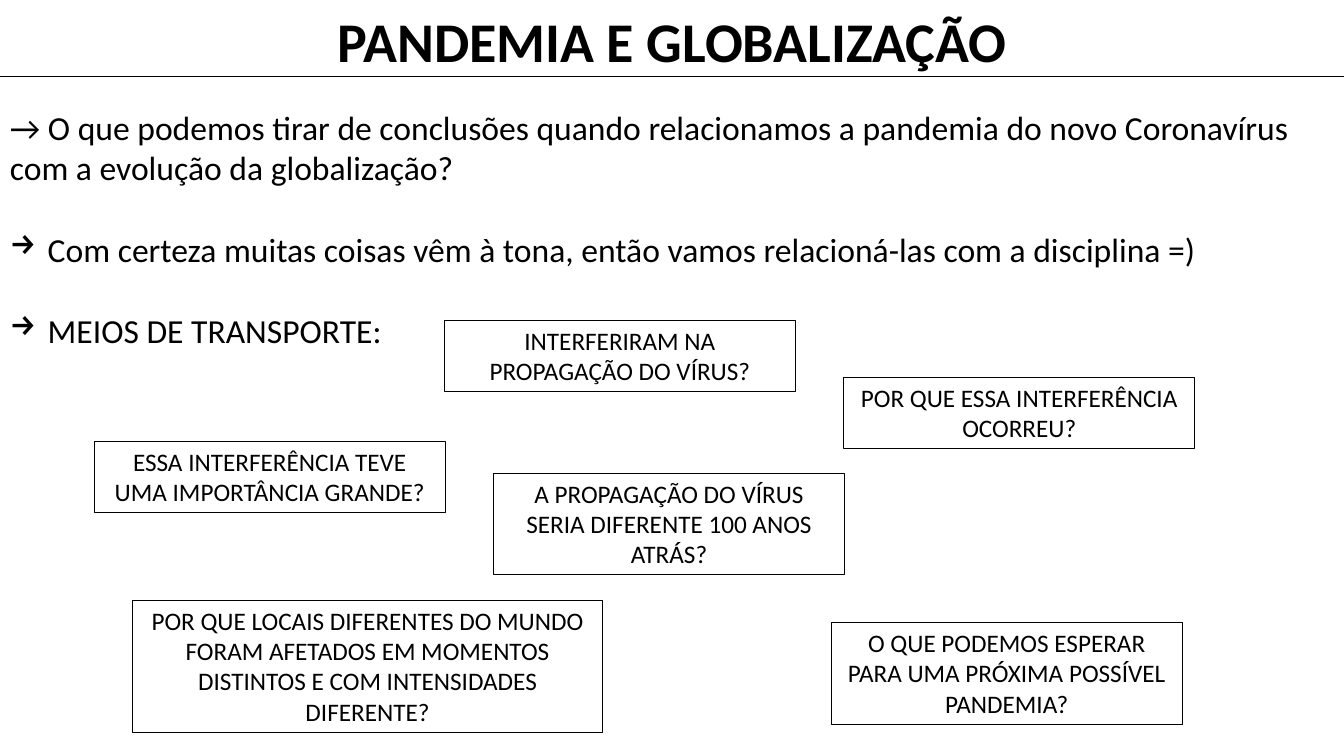
"""Build the slide on the pandemic and globalization."""
from lxml import etree
from pptx import Presentation
from pptx.dml.color import RGBColor
from pptx.enum.shapes import MSO_CONNECTOR, MSO_SHAPE
from pptx.enum.text import MSO_ANCHOR, PP_ALIGN
from pptx.oxml.ns import qn
from pptx.util import Pt

BLACK = RGBColor(0, 0, 0)
LEFT, CENTER = PP_ALIGN.LEFT, PP_ALIGN.CENTER
TOP = MSO_ANCHOR.TOP
RECTANGLE, STRAIGHT = MSO_SHAPE.RECTANGLE, MSO_CONNECTOR.STRAIGHT
WIDTH, HEIGHT = 960, 540
BODY_LINE = 29.3
QUESTION_LINE, QUESTION_PADDING = 21.8, 7.2


def write(frame, paragraphs, alignment, size, bold=False):
    frame.word_wrap = True
    frame.vertical_anchor = TOP
    for index, text in enumerate(paragraphs):
        paragraph = frame.paragraphs[0] if index == 0 else frame.add_paragraph()
        paragraph.alignment = alignment
        run = paragraph.add_run()
        run.text = text
        font_format = {"name": "Calibri", "size": Pt(size), "bold": bold}
        for attribute, value in font_format.items():
            setattr(run.font, attribute, value)
        run.font.color.rgb = BLACK


prs = Presentation()
prs.slide_width, prs.slide_height = Pt(WIDTH), Pt(HEIGHT)
slide = prs.slides.add_slide(prs.slide_layouts[6])

title = slide.shapes.add_textbox(Pt(0), Pt(1.4), Pt(WIDTH), Pt(55.7))
write(title.text_frame, ["PANDEMIA E GLOBALIZAÇÃO"], CENTER, 40, bold=True)

title_rule = slide.shapes.add_connector(STRAIGHT, Pt(0), Pt(54.7), Pt(WIDTH), Pt(54.7))
title_rule.line.color.rgb = BLACK
title_rule.line.width = Pt(0.5)
etree.SubElement(title_rule._element.spPr, qn("a:effectLst"))

body = slide.shapes.add_textbox(Pt(0), Pt(72.7), Pt(WIDTH), Pt(181.4))
write(body.text_frame, [
    "→ O que podemos tirar de conclusões quando relacionamos a pandemia "
    "do novo Coronavírus com a evolução da globalização?",
    "Com certeza muitas coisas vêm à tona, então vamos relacioná-las com a disciplina =)",
    "MEIOS DE TRANSPORTE:",
], LEFT, 24)
for topic in body.text_frame.paragraphs[1:]:
    topic.space_before = Pt(BODY_LINE)
    properties = topic._p.get_or_add_pPr()
    properties.set("marL", str(Pt(27)))
    properties.set("indent", str(Pt(-27)))
    etree.SubElement(properties, qn("a:buChar")).set("char", "→")

questions = [
    (317.5, 228.8, 250.6, 2, "INTERFERIRAM NA PROPAGAÇÃO DO VÍRUS?"),
    (602.8, 269.7, 250.6, 2, "POR QUE ESSA INTERFERÊNCIA OCORREU?"),
    (67.4, 315.4, 250.6, 2, "ESSA INTERFERÊNCIA TEVE UMA IMPORTÂNCIA GRANDE?"),
    (352.6, 338, 250.6, 3, "A PROPAGAÇÃO DO VÍRUS SERIA DIFERENTE 100 ANOS ATRÁS?"),
    (94.6, 428.8, 336, 4, "POR QUE LOCAIS DIFERENTES DO MUNDO FORAM AFETADOS "
     "EM MOMENTOS DISTINTOS E COM INTENSIDADES DIFERENTE?"),
    (593.8, 444.7, 250.6, 3, "O QUE PODEMOS ESPERAR PARA UMA PRÓXIMA POSSÍVEL PANDEMIA?"),
]
for left, top, width, lines, text in questions:
    height = QUESTION_PADDING + lines * QUESTION_LINE
    question = slide.shapes.add_shape(RECTANGLE, Pt(left), Pt(top), Pt(width), Pt(height))
    question.shadow.inherit = False
    question.fill.background()
    question.line.color.rgb = BLACK
    question.line.width = Pt(0.75)
    write(question.text_frame, [text], CENTER, 18)

prs.save("out.pptx")
